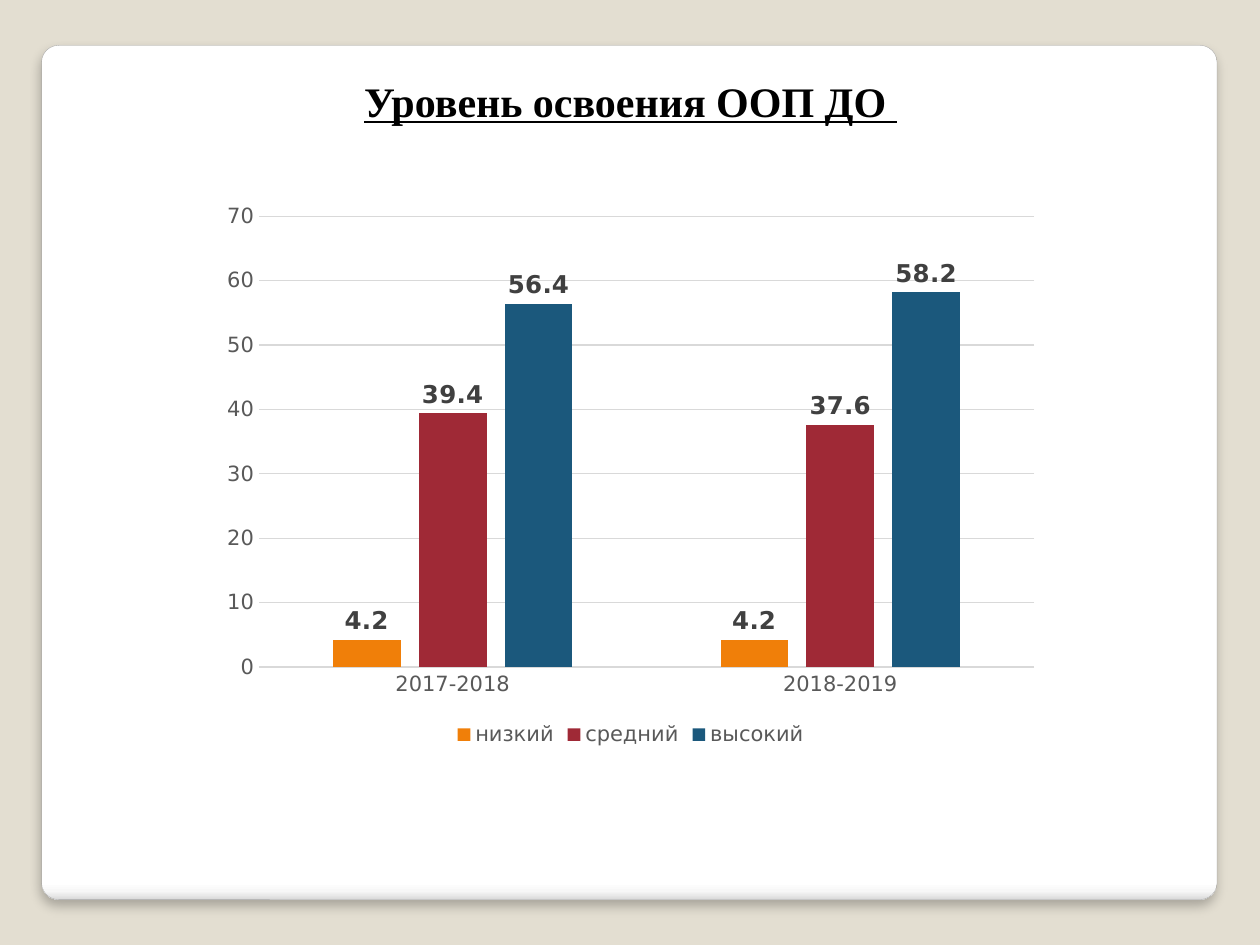
import pptx
import pptx.util
import pptx.dml.color
import pptx.chart.data
import pptx.enum.chart
import pptx.enum.shapes
import pptx.enum.text
import pptx.oxml
import pptx.oxml.ns

Inches, Pt = pptx.util.Inches, pptx.util.Pt
qn = pptx.oxml.ns.qn
SANS = "DejaVu Sans"
GRID = "D9D9D9"


def tint(target, code):
    """Give a fill or a line a solid colour."""
    fill = getattr(target, "fill", target)
    fill.solid()
    fill.fore_color.rgb = pptx.dml.color.RGBColor.from_string(code)


def style(font, text=None, face=SANS, size=12, color="595959", bold=False, under=False):
    """Format a font; with text, first add it as a run to the given paragraph."""
    if text is not None:
        run = font.add_run()
        run.text = text
        font = run.font
    font.name, font.size, font.bold, font.underline = face, Pt(size), bold, under
    tint(font, color)


deck = pptx.Presentation()
deck.slide_width, deck.slide_height = Inches(10), Inches(7.5)
slide = deck.slides.add_slide(deck.slide_layouts[6])
tint(slide.background, "E3DED1")

# Rounded panel with a shaded lower edge
panel = slide.shapes.add_shape(
    pptx.enum.shapes.MSO_SHAPE.ROUNDED_RECTANGLE,
    Inches(0.33), Inches(0.36), Inches(9.33), Inches(6.78))
panel.adjustments[0] = 0.02
tint(panel.line, "A4A4A4")
panel.line.width = Pt(0.16)
panel.fill.gradient()
panel.fill.gradient_angle = 270
stops = next(panel.element.iter(qn("a:gsLst")))
for stop in list(stops):
    stops.remove(stop)
space = pptx.oxml.ns.nsdecls("a")
for place, code in ((0, "FFFFFF"), (98, "FFFFFF"), (99, "F7F7F7"), (100, "DADADA")):
    stops.append(pptx.oxml.parse_xml(
        f'<a:gs {space} pos="{place * 1000}"><a:srgbClr val="{code}"/></a:gs>'))

# Soft shadow below the panel
panel.shadow.inherit = False
next(panel.element.iter(qn("a:effectLst"))).append(pptx.oxml.parse_xml(
    f'<a:outerShdw {space} blurRad="{Pt(6)}" dist="{Pt(4)}" dir="5400000" '
    'algn="t" rotWithShape="0"><a:srgbClr val="000000"><a:alpha val="25000"/>'
    '</a:srgbClr></a:outerShdw>'))

# Title
box = slide.shapes.add_textbox(Inches(1.95), Inches(0.55), Inches(5.86), Inches(0.5))
frame = box.text_frame
frame.word_wrap = True
frame.margin_left = Inches(0.94)
frame.vertical_anchor = pptx.enum.text.MSO_ANCHOR.MIDDLE
style(frame.paragraphs[0], "Уровень освоения ООП ДО ", face="Times New Roman",
      size=24, color="000000", bold=True, under=True)

# Chart
data = pptx.chart.data.CategoryChartData()
data.categories = ["2017-2018", "2018-2019"]
levels = (("низкий", (4.2, 4.2), "F07F09"),
          ("средний", (39.4, 37.6), "9F2936"),
          ("высокий", (56.4, 58.2), "1B587C"))
for name, values, code in levels:
    data.add_series(name, values)
chart = slide.shapes.add_chart(
    pptx.enum.chart.XL_CHART_TYPE.COLUMN_CLUSTERED,
    Inches(1.67), Inches(1.53), Inches(6.67), Inches(4.44), data).chart
chart.has_title = False
style(chart.font, size=10, color="000000")

# Columns and their labels
plot = chart.plots[0]
plot.vary_by_categories = False
plot.gap_width, plot.overlap = 219, -27
for series, (name, values, code) in zip(plot.series, levels):
    tint(series.format, code)
    series.invert_if_negative = False
    labels = series.data_labels
    labels.show_value = True
    labels.position = pptx.enum.chart.XL_LABEL_POSITION.OUTSIDE_END
    style(labels.font, size=14, color="404040", bold=True)

# Axes
for axis in (chart.category_axis, chart.value_axis):
    axis.major_tick_mark = axis.minor_tick_mark = pptx.enum.chart.XL_TICK_MARK.NONE
    style(axis.tick_labels.font)
rows = chart.value_axis
rows.minimum_scale, rows.maximum_scale, rows.major_unit = 0, 70, 10
rows.format.line.fill.background()
for line in (chart.category_axis.format.line, rows.major_gridlines.format.line):
    tint(line, GRID)
    line.width = Pt(0.75)

# Legend
chart.has_legend = True
chart.legend.position = pptx.enum.chart.XL_LEGEND_POSITION.BOTTOM
chart.legend.include_in_layout = False
style(chart.legend.font)

deck.save("out.pptx")
